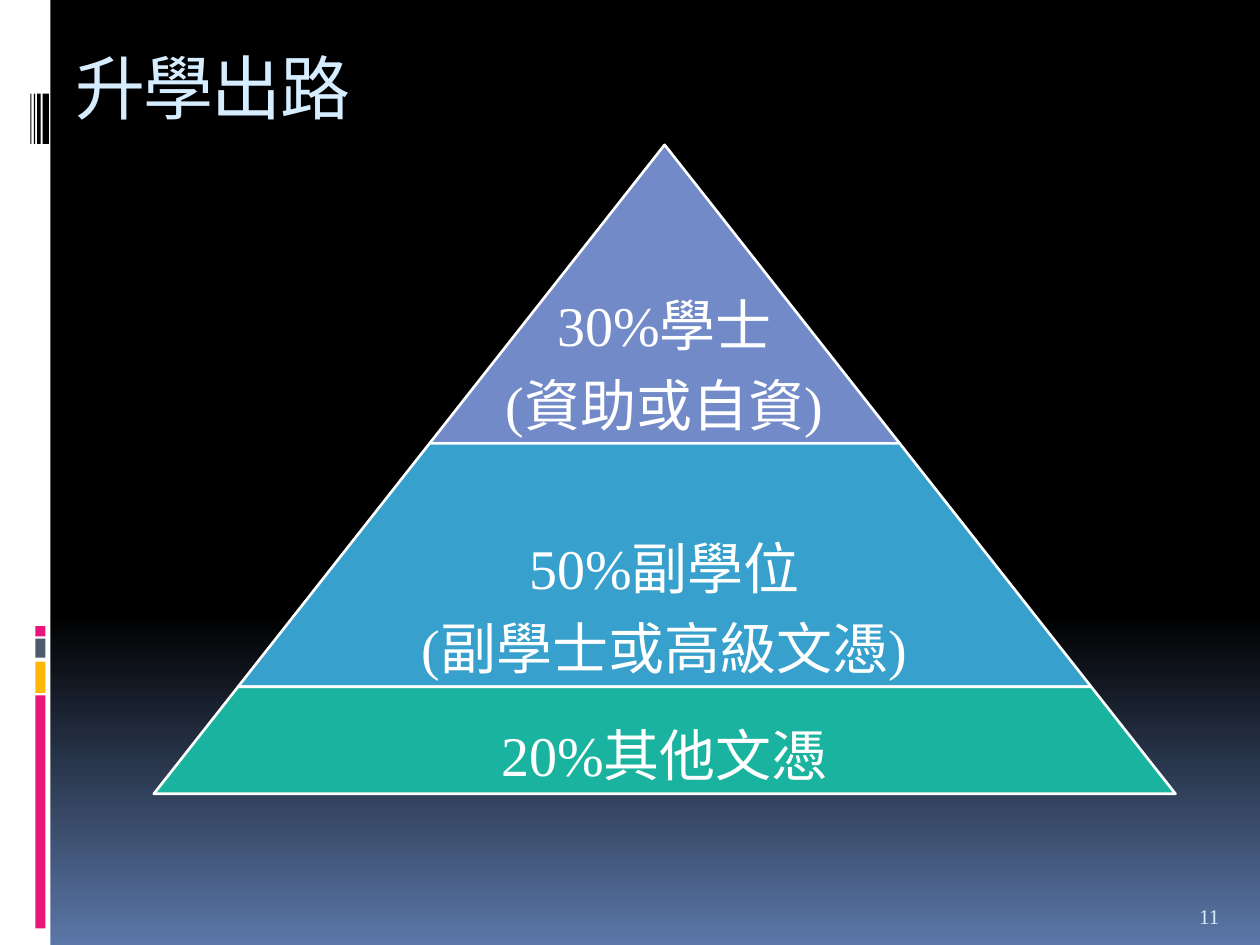
from copy import deepcopy
from pptx import Presentation
from pptx.dml.color import RGBColor
from pptx.enum import shapes as sh, text as tx
from pptx.oxml.ns import qn
from pptx.util import Pt

WHITE = RGBColor(0xFF, 0xFF, 0xFF)
BLACK = RGBColor(0, 0, 0)
BLUE = RGBColor(0x5B, 0x77, 0xA8)
PINK = RGBColor(0xEA, 0x15, 0x7A)
GOLD = RGBColor(0xFE, 0xB8, 0x0A)
SLATE = RGBColor(0x4E, 0x5B, 0x6F)
PALE = RGBColor(0xD6, 0xEC, 0xFF)
VIOLET = RGBColor(0x73, 0x8A, 0xC8)
SKY = RGBColor(0x38, 0xA0, 0xCC)
GREEN = RGBColor(0x1A, 0xB3, 0x9F)
SERIF = "Times New Roman"
SLOPE = 0.787  # half the width gained per unit of height

TIERS = [
    (170.6, VIOLET, 1, ["30%學士", "(資助或自資)"]),
    (139, SKY, 0.65, ["50%副學位", "(副學士或高級文憑)"]),
    (61.2, GREEN, 0.65, ["20%其他文憑"]),
]


def put(obj, **vals):
    for name, val in vals.items():
        setattr(obj, name, val)


def block(slide, kind, box, fill):
    part = slide.shapes.add_shape(kind, *map(Pt, box))
    part.shadow.inherit = False
    part.fill.solid()
    part.fill.fore_color.rgb = fill
    part.line.fill.background()
    return part


def write(frame, lines, pad, size, font, color, anchor, **para):
    put(frame, word_wrap=True, vertical_anchor=anchor,
        auto_size=tx.MSO_AUTO_SIZE.NONE)
    for side, gap in zip(("left", "top", "right", "bottom"), pad):
        setattr(frame, "margin_" + side, Pt(gap))
    frame.text = "\n".join(lines)
    for par in frame.paragraphs:
        put(par, **para)
        for run in par.runs:
            put(run.font, size=Pt(size), name=font)
            run.font.color.rgb = color


def label(slide, box, *args, **para):
    part = slide.shapes.add_textbox(*map(Pt, box))
    write(part.text_frame, *args, **para)


def backdrop(slide):
    fill = slide.background.fill
    fill.gradient()
    fill.gradient_angle = 270
    for stop, pos, color in zip(fill.gradient_stops, (0.65, 1), (BLACK, BLUE)):
        stop.position = pos
        stop.color.rgb = color
    # Hold black from the top edge
    stops = next(slide._element.iter(qn("a:gsLst")))
    first = deepcopy(stops[0])
    first.set("pos", "0")
    stops.insert(0, first)


def sidebar(slide, left, top, width, height):
    rect = sh.MSO_SHAPE.RECTANGLE
    block(slide, rect, (left, top, width, height), WHITE)
    # Colour bars
    for y, tall, color in [(397.4, 133.2, PINK), (378, 18, GOLD),
                           (365, 10.8, SLATE), (357.8, 5.8, PINK)]:
        block(slide, rect, (left + 20.2, top + y, 5.8, tall), color)
    # Thin stripes
    for x, wide in [(24.4, 3.6), (21.2, 2.1), (19.4, 0.7), (17.4, 0.6)]:
        block(slide, rect, (left + x, top + 53.5, wide, 28.8), BLACK)


def heading(slide, left, top, width, height):
    title = slide.shapes.title
    put(title, left=Pt(left), top=Pt(top), width=Pt(width), height=Pt(height))
    write(title.text_frame, ["升學出路"], (7.2, 3.6, 7.2, 3.6), 40, "Arial",
          PALE, tx.MSO_ANCHOR.TOP, alignment=tx.PP_ALIGN.LEFT)
    title.text_frame.paragraphs[0].runs[0].font._element.set("spc", "-100")


def pyramid(slide, left, top, width, height):
    mid = left + width / 2
    total = sum(tier[0] for tier in TIERS)
    depth = 0
    for part, fill, share, lines in TIERS:
        tall = height * part / total
        y = top + depth
        depth += tall
        wide = width * depth / height
        tier = block(slide, sh.MSO_SHAPE.TRAPEZOID,
                     (mid - wide / 2, y, wide, tall), fill)
        tier.adjustments[0] = SLOPE
        tier.line.color.rgb = WHITE
        tier.line.width = Pt(1.5)
        span = wide * share
        label(slide, (mid - span / 2, y, span, tall), lines, [2.9] * 4, 32,
              SERIF, WHITE, tx.MSO_ANCHOR.BOTTOM, line_spacing=0.9,
              space_after=Pt(11.2), alignment=tx.PP_ALIGN.CENTER)


def number(slide, *box):
    label(slide, box, ["11"], (7.2, 3.6, 7.2, 3.6), 12, SERIF, PALE,
          tx.MSO_ANCHOR.BOTTOM)


def main():
    deck = Presentation()
    put(deck, slide_width=Pt(720), slide_height=Pt(540))
    slide = deck.slides.add_slide(deck.slide_layouts[5])
    backdrop(slide)
    sidebar(slide, 0, 0, 28.8, 540)
    heading(slide, 36, 21.6, 648, 90)
    pyramid(slide, 87.9, 82.8, 583.8, 370.8)
    number(slide, 678.2, 505.4, 36, 28.8)
    deck.save("out.pptx")


if __name__ == "__main__":
    main()
